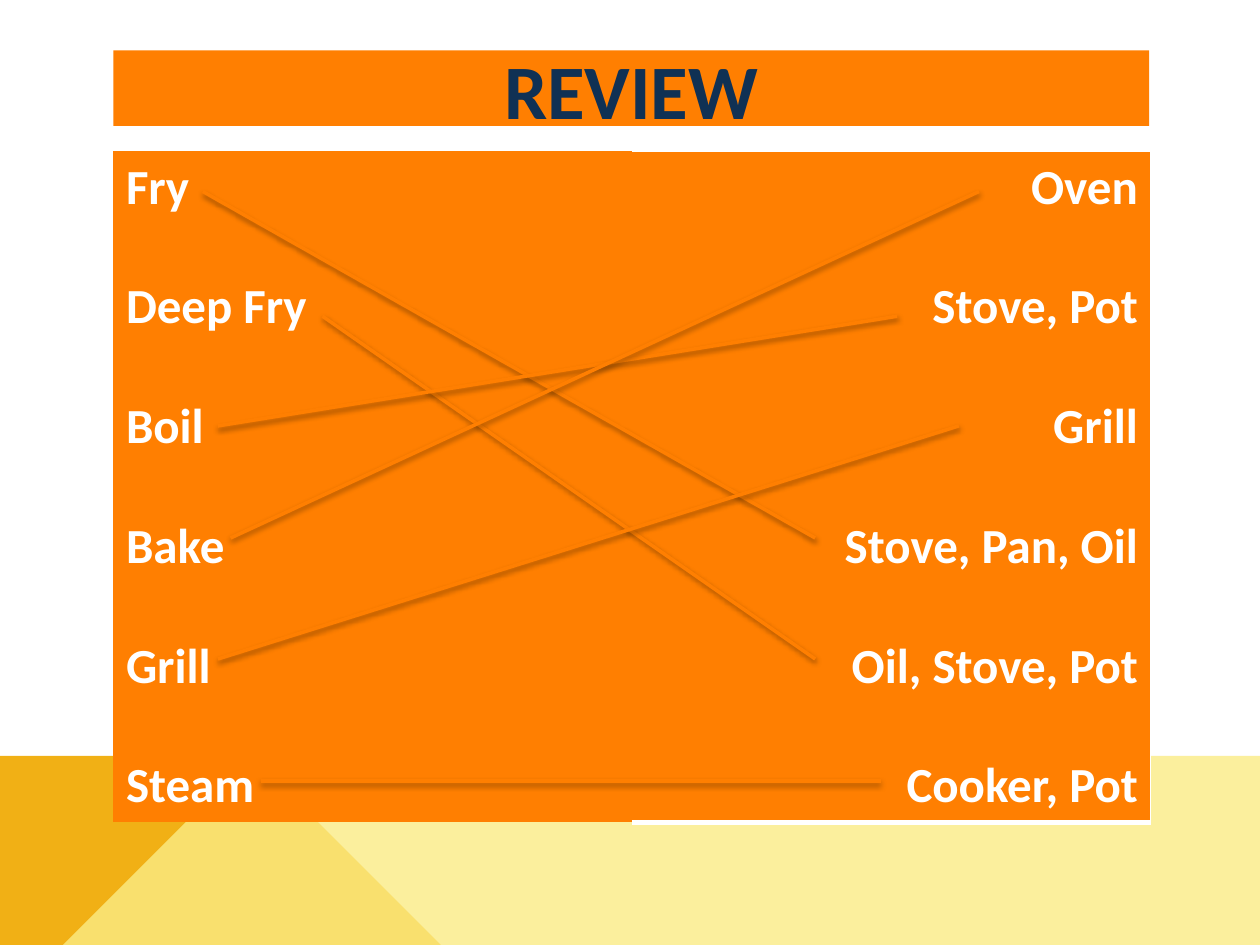
"""Build a review slide that matches cooking methods to their tools."""
from lxml.etree import SubElement as Sub
from pptx import Presentation
from pptx.dml.color import RGBColor as RGB
from pptx.enum.shapes import MSO_CONNECTOR as Link
from pptx.enum.text import MSO_ANCHOR as Anchor, PP_ALIGN as Align
from pptx.oxml.ns import qn
from pptx.util import Inches, Pt

TITLE = "REVIEW"
LEFT = [("Fry", 1.61), ("Deep Fry", 2.56), ("Boil", 1.73),
        ("Bake", 1.83), ("Grill", 1.73), ("Steam", 2.07)]
RIGHT = [("Oven", 7.77), ("Stove, Pot", 7.12), ("Grill", 7.61),
         ("Stove, Pan, Oil", 6.47), ("Oil, Stove, Pot", 6.47), ("Cooker, Pot", 6.99)]
MATCH = [3, 4, 1, 0, 2, 5]
ROWS = [1.52, 2.51, 3.38, 4.27, 5.23, 6.2]
BANDS = [
    ([(0, 7.5), (0, 5.52), (2.23, 5.52), (3.91, 7.5)], "gold", None),
    ([(0, 7.5), (2.23, 5.52), (10, 5.53), (10, 7.5)], "pale", 80),
]
THEME = {"font": "Calibri", "orange": "FF7F01", "navy": "103154", "white": "FFFFFF",
         "gold": "F1B015", "pale": "FBEC85", "head": 44, "body": 28, "gap": 34.2}


def paint(fill, name):
    fill.solid()
    fill.fore_color.rgb = RGB.from_string(THEME[name])


def write(para, text, size, color, align):
    para.alignment = align
    run = para.add_run()
    run.text = text
    font = run.font
    font.name, font.size, font.bold = THEME["font"], Pt(THEME[size]), True
    font.color.rgb = RGB.from_string(THEME[color])


def add_band(slide, points, color, alpha):
    pen = slide.shapes.build_freeform(*points[0], scale=Inches(1))
    pen.add_line_segments(points[1:], close=True)
    band = pen.convert_to_shape()
    band.shadow.inherit = False
    paint(band.fill, color)
    band.line.fill.background()
    if alpha:
        tint = band.fill._xPr.find(".//" + qn("a:srgbClr"))
        Sub(tint, qn("a:alpha"), val=str(alpha * 1000))


def add_title(slide):
    title = slide.shapes.title
    title.left, title.top, title.width, title.height = map(Inches, (0.9, 0.4, 8.22, 0.6))
    paint(title.fill, "orange")
    frame = title.text_frame
    frame.vertical_anchor = Anchor.MIDDLE
    write(frame.paragraphs[0], TITLE, "head", "navy", Align.CENTER)


def edge(cell, widths):
    props = cell._tc.get_or_add_tcPr()
    for side in "LRTB":
        wide = widths.get(side, 0)
        line = Sub(props, qn("a:ln" + side), w=str(Pt(wide)))
        if wide:
            Sub(Sub(line, qn("a:solidFill")), qn("a:srgbClr"), val=THEME["white"])
        else:
            Sub(line, qn("a:noFill"))


def add_lists(slide):
    spot = map(Inches, (0.9, 1.2, 8.23, 5.32))
    table = slide.shapes.add_table(1, 2, *spot).table
    table.first_row = table.horz_banding = False
    sides = [(LEFT, Align.LEFT, {}), (RIGHT, Align.RIGHT, {"R": 1, "T": 1, "B": 3})]
    for col, (items, align, widths) in enumerate(sides):
        cell = table.cell(0, col)
        edge(cell, widths)
        paint(cell.fill, "orange")
        frame = cell.text_frame
        for row, (text, _) in enumerate(items):
            para = frame.add_paragraph() if row else frame.paragraphs[0]
            para.space_before = Pt(THEME["gap"] if row else 0)
            write(para, text, "body", "white", align)


def add_match(slide, row, goal):
    ends = (LEFT[row][1], ROWS[row], RIGHT[goal][1], ROWS[goal])
    line = slide.shapes.add_connector(Link.STRAIGHT, *map(Inches, ends))
    line.line.width = Pt(2)
    paint(line.line.fill, "orange")
    glow = Sub(Sub(line._element.spPr, qn("a:effectLst")), qn("a:outerShdw"),
               blurRad=str(Pt(3.1)), dist=str(Pt(1.6)), dir="5400000", rotWithShape="0")
    Sub(Sub(glow, qn("a:srgbClr"), val="000000"), qn("a:alpha"), val="38000")


def main():
    deck = Presentation()
    deck.slide_width, deck.slide_height = Inches(10), Inches(7.5)
    slide = deck.slides.add_slide(deck.slide_layouts[5])
    for band in BANDS:
        add_band(slide, *band)
    add_title(slide)
    add_lists(slide)
    for row, goal in enumerate(MATCH):
        add_match(slide, row, goal)
    deck.save("out.pptx")


if __name__ == "__main__":
    main()
